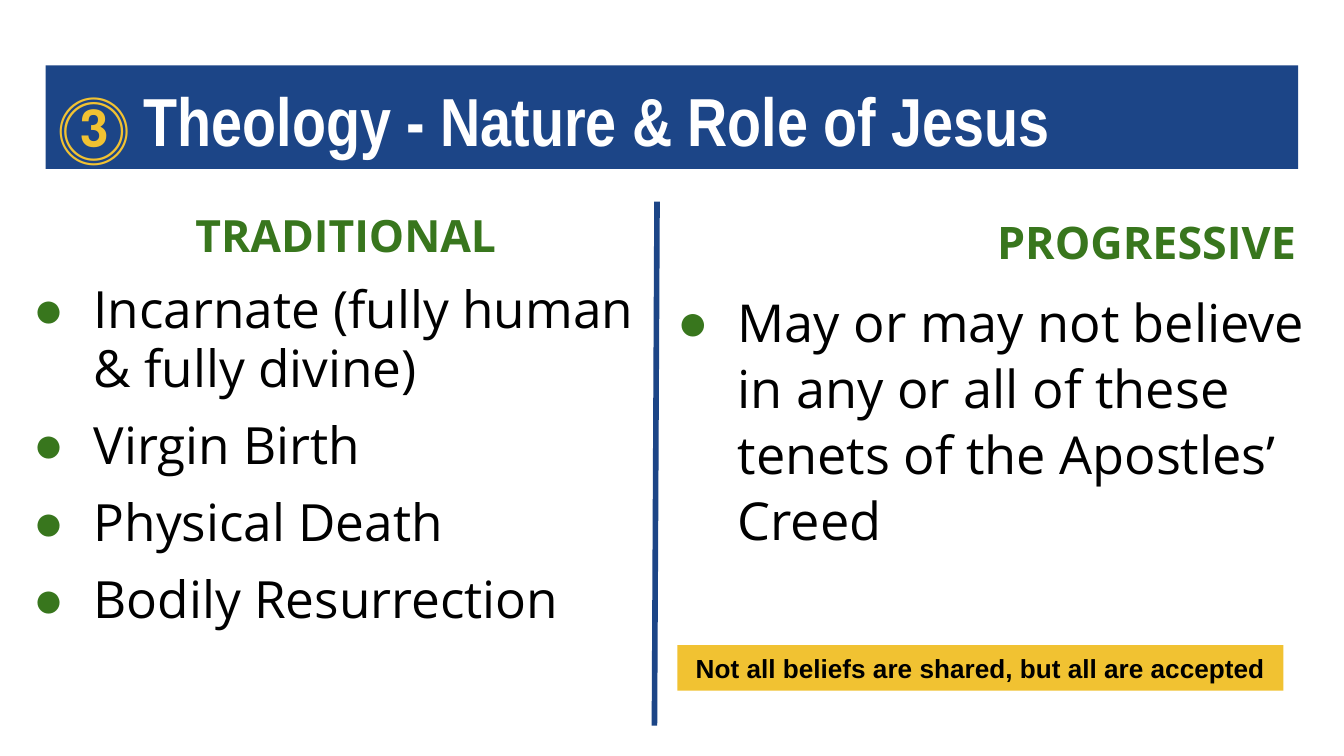
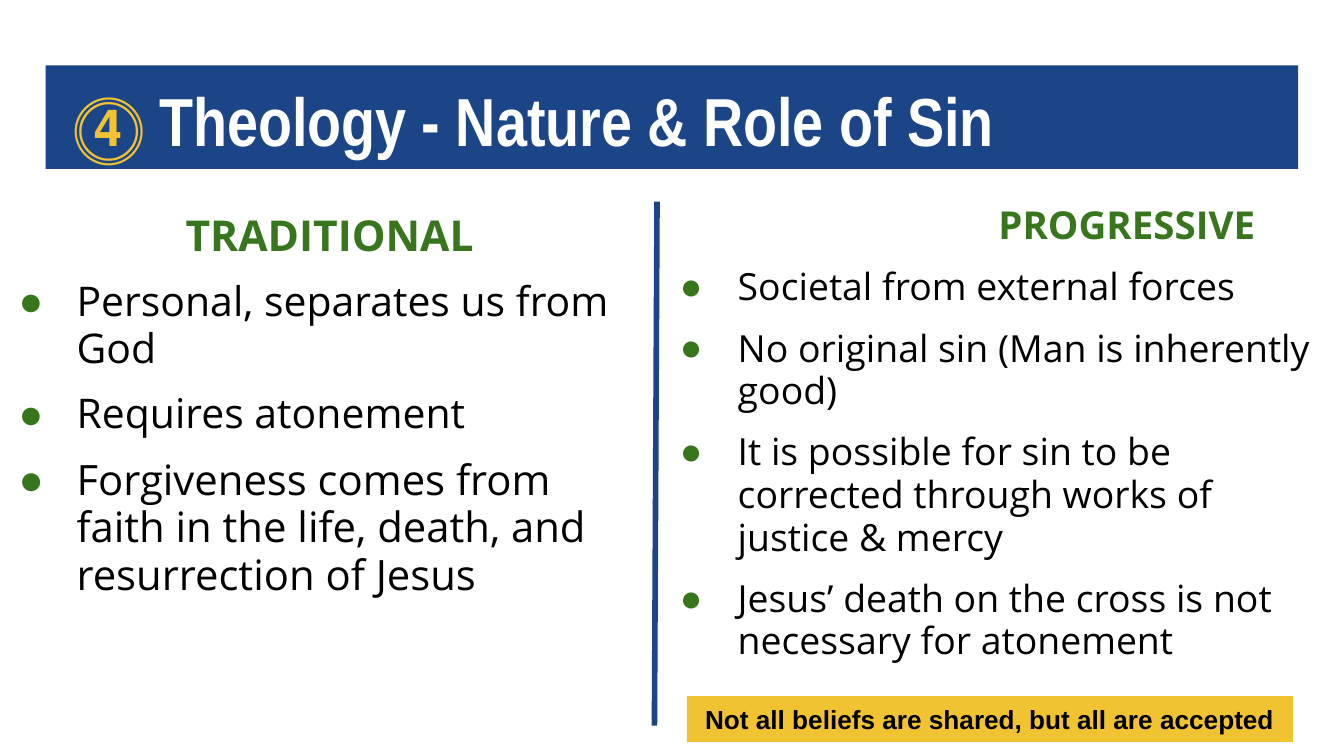
"""Build two slides comparing traditional and progressive theology."""
from lxml.etree import SubElement
from pptx import Presentation
from pptx.dml.color import RGBColor
from pptx.enum.shapes import MSO_CONNECTOR, MSO_SHAPE
from pptx.enum.text import MSO_ANCHOR, MSO_AUTO_SIZE, PP_ALIGN
from pptx.oxml.ns import qn
from pptx.util import Pt

BLUE, GOLD, GREEN = "1C4587", "F1C232", "38761D"
WHITE, BLACK = "FFFFFF", "000000"
HEAD, BODY, NOTE = "Arial Narrow", "Open Sans", "Arial"
MOTTO = "Not all beliefs are shared, but all are accepted"


def tint(part, shade):
    """Give a fill or font a hex colour."""
    if hasattr(part, "solid"):
        part.solid()
        part = part.fore_color
    else:
        part = part.color
    part.rgb = RGBColor.from_string(shade)


def place(shape, box):
    """Move a shape to left, top, width and height in points."""
    shape.left, shape.top, shape.width, shape.height = map(Pt, box)


def add_run(para, text, size, face, shade, bold=True):
    """Add one formatted run."""
    run = para.add_run()
    run.text = text
    run.font.size, run.font.name, run.font.bold = Pt(size), face, bold
    tint(run.font, shade)
    return run


def set_frame(frame):
    """Fix the margins, wrapping and anchor of a placeholder."""
    frame.word_wrap = True
    frame.auto_size = MSO_AUTO_SIZE.NONE
    frame.vertical_anchor = MSO_ANCHOR.TOP
    frame.margin_left = frame.margin_right = Pt(7.2)
    frame.margin_top = frame.margin_bottom = Pt(7.2)


def set_para(para, align, space, left, hang=0):
    """Set the spacing and indents of a list paragraph, with a bullet if it hangs."""
    para.alignment, para.line_spacing = align, space
    para.space_before, para.space_after = Pt(10), Pt(0)
    props = para._p.get_or_add_pPr()
    props.set("marL", str(Pt(left)))
    props.set("indent", str(Pt(-hang)))
    if not hang:
        SubElement(props, qn("a:buNone"))
        return
    SubElement(SubElement(props, qn("a:buClr")), qn("a:srgbClr")).set("val", GREEN)
    SubElement(props, qn("a:buFont")).set("typeface", NOTE)
    SubElement(props, qn("a:buChar")).set("char", "●")


def add_title(slide, parts):
    """Fill the title band with coloured runs."""
    title = slide.shapes.title
    place(title, (24.5, 35, 671, 55.5))
    tint(title.fill, BLUE)
    set_frame(title.text_frame)
    para = title.text_frame.paragraphs[0]
    para.alignment = PP_ALIGN.LEFT
    for text, shade in parts:
        add_run(para, text, 36.4, HEAD, shade)


def add_list(holder, box, head, size, left, items, hang, space=0.95, small=False):
    """Fill a body placeholder with a heading and bulleted items."""
    place(holder, box)
    frame = holder.text_frame
    set_frame(frame)
    para = frame.paragraphs[0]
    set_para(para, PP_ALIGN.CENTER, space, left)
    run = add_run(para, head, size, BODY, GREEN)
    if small:
        run.font._element.set("cap", "small")
    for text, points in items:
        para = frame.add_paragraph()
        set_para(para, PP_ALIGN.LEFT, space, 36, hang)
        add_run(para, text, points, BODY, BLACK, False)


def add_rule(slide):
    """Draw the line between the columns."""
    rule = slide.shapes.add_connector(
        MSO_CONNECTOR.STRAIGHT, Pt(352), Pt(108), Pt(350.6), Pt(388.8))
    tint(rule.line.fill, BLUE)
    rule.line.width = Pt(3)
    SubElement(rule._element.spPr, qn("a:effectLst"))


def add_note(slide, left, top):
    """Add the gold motto strip."""
    note = slide.shapes.add_shape(
        MSO_SHAPE.RECTANGLE, Pt(left), Pt(top), Pt(324.7), Pt(24.5))
    note.shadow.inherit = False
    tint(note.fill, GOLD)
    note.line.fill.background()
    frame = note.text_frame
    frame.word_wrap = True
    frame.auto_size = MSO_AUTO_SIZE.SHAPE_TO_FIT_TEXT
    para = frame.paragraphs[0]
    para.alignment = PP_ALIGN.CENTER
    add_run(para, MOTTO, 14, NOTE, BLACK)


def add_page(deck, title, trad, prog, left, hang, spot):
    """Add one comparison slide."""
    slide = deck.slides.add_slide(deck.slide_layouts[3])
    add_title(slide, title)
    first, second = slide.placeholders[1], slide.placeholders[2]
    add_list(first, head="TRADITIONAL", left=left, hang=hang, **trad)
    add_list(second, head="PROGRESSIVE", left=left, hang=hang, small=True, **prog)
    add_rule(slide)
    add_note(slide, *spot)


def main():
    """Build and save the deck."""
    deck = Presentation()
    deck.slide_width, deck.slide_height = Pt(720), Pt(405)
    add_page(
        deck,
        [("⓷ ", GOLD), ("Theology - Nature & Role of Jesus", WHITE)],
        dict(box=(7, 106.6, 352.8, 290), size=23.8, items=[
            ("Incarnate (fully human & fully divine)", 27.5),
            ("Virgin Birth", 27.5),
            ("Physical Death", 27.5),
            ("Bodily Resurrection", 27.5)]),
        dict(box=(352, 106.6, 360.7, 253.4), size=24, space=1.05, items=[
            ("May or may not believe in any or all of these tenets "
             "of the Apostles’ Creed", 28)]),
        3.6, 32.4, (362.9, 345.6))
    add_page(
        deck,
        [(" ", WHITE), ("⓸", GOLD), (" Theology - Nature & Role of Sin", WHITE)],
        dict(box=(-2.2, 106.6, 352.8, 280.8), size=22.8, items=[
            ("Personal, separates us from God", 21.9),
            ("Requires atonement", 21.9),
            ("Forgiveness comes from faith in the life, death, "
             "and resurrection of Jesus", 22.4)]),
        dict(box=(352, 102.2, 360.7, 280.8), size=20.6, items=[
            ("Societal from external forces", 20),
            ("No original sin (Man is inherently good)", 20),
            ("It is possible for sin to be corrected through works "
             "of justice & mercy", 20),
            ("Jesus’ death on the cross is not necessary for atonement", 20)]),
        5, 31, (367.9, 373))
    deck.save("out.pptx")


if __name__ == "__main__":
    main()
